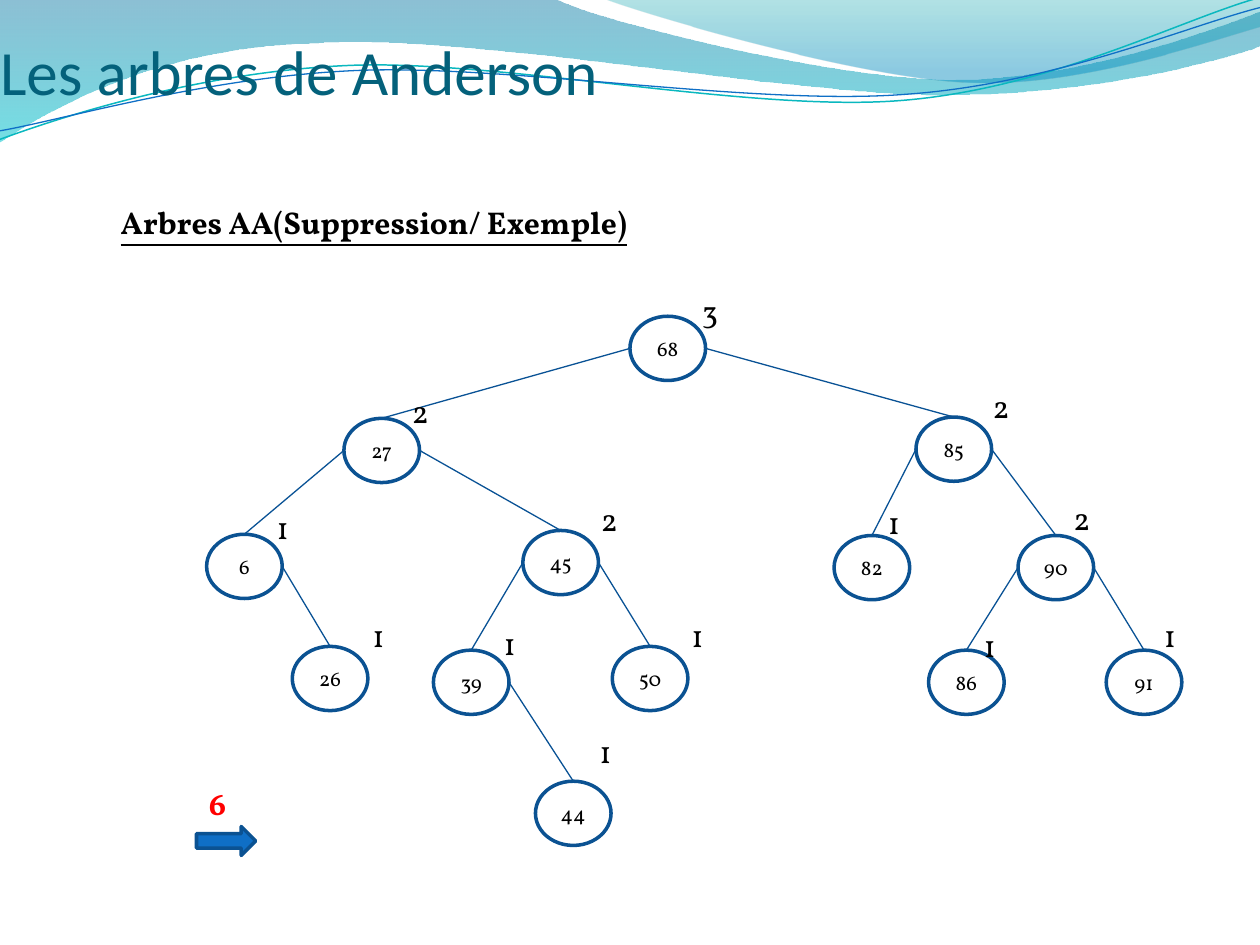
from lxml.etree import SubElement
from pptx import Presentation
from pptx.dml.color import RGBColor
from pptx.enum.shapes import MSO_CONNECTOR, MSO_SHAPE
from pptx.enum.text import MSO_ANCHOR, PP_ALIGN
from pptx.oxml.ns import qn
from pptx.util import Pt

PX = 9144
WIDE, HIGH = 1000, 750
NODE_W, NODE_H = 60, 51
TAG_W, TAG_H = 33, 40

THEME = {
    "title": "04617B", "ink": "000000", "paper": "FFFFFF", "red": "FF0000",
    "blue": "0F6FC6", "rim": "0B5292", "edge": "095295", "teal": "0AB8BF",
    "head": "Calibri", "body": "Vollkorn",
    "big": 36, "mid": 18, "small": 12,
}

TITLE = "Les arbres de Anderson"
TOPIC = "Arbres AA(Suppression/ Exemple)"
GONE = "6"

# key, parent, node corner, level, level corner
NODES = [
    (68, None, (500, 251), 3, (547, 227)),
    (27, 68, (273, 332), 2, (317, 306)),
    (85, 68, (727, 331), 2, (778, 302)),
    (6, 27, (164, 424), 1, (208, 398)),
    (45, 27, (415, 421), 2, (467, 392)),
    (82, 85, (662, 425), 1, (693, 394)),
    (90, 85, (808, 425), 2, (842, 391)),
    (26, 6, (232, 513), 1, (284, 484)),
    (39, 45, (344, 516), 1, (388, 490)),
    (50, 45, (486, 513), 1, (537, 484)),
    (86, 90, (737, 516), 1, (769, 492)),
    (91, 90, (878, 516), 1, (912, 484)),
    (44, 39, (425, 620), 1, (464, 576)),
]

BANDS = [
    ([(0, -1), (440, -1), (476, 17, 664, 63, 758, 63),
      (853, 63, 958, 26, 1000, 9), (1001, 36),
      (983, 44, 870, 76, 746, 75), (622, 75, 382, 28, 257, 34),
      (129, 36, 46, 83, -1, 113)],
     [(0, "0074A1", 45), (1, "00C6CF", 55)]),
    ([(479, -1), (509, 11, 682, 62, 769, 65),
      (856, 69, 961, 32, 1000, 21), (1000, 0)],
     [(0, "00A1A9", 30), (0.8, "008BBF", 45)]),
]
WAVES = [
    ([(-1, 111), (48, 93, 158, 57, 277, 52), (395, 47, 593, 89, 713, 80),
      (833, 71, 938, 15, 1000, -2)], "teal", 0.85),
    ([(-1, 104), (47, 96, 164, 61, 283, 56), (403, 51, 597, 84, 717, 75),
      (836, 67, 941, 21, 1000, 6)], "blue", 0.75),
]


def tint(name):
    return RGBColor.from_string(THEME.get(name, name))


def write(shape, text, size="mid", font="body", color="ink", bold=False,
          under=False, align=PP_ALIGN.CENTER, anchor=MSO_ANCHOR.TOP, wrap=True):
    frame = shape.text_frame
    frame.word_wrap = wrap
    frame.vertical_anchor = anchor
    para = frame.paragraphs[0]
    para.alignment = align
    run = para.add_run()
    run.text = str(text)
    run.font.size = Pt(THEME[size])
    run.font.name = THEME[font]
    run.font.color.rgb = tint(color)
    run.font.bold = bold
    run.font.underline = under
    return frame


def box(shapes, x, y, w, h, text, **style):
    return write(shapes.add_textbox(x * PX, y * PX, w * PX, h * PX), text, **style)


def stroke(shape, color, width):
    shape.line.color.rgb = tint(color)
    shape.line.width = Pt(width)


def solid(shapes, kind, x, y, w, h, fill):
    shape = shapes.add_shape(kind, x * PX, y * PX, w * PX, h * PX)
    shape.shadow.inherit = False
    shape.fill.solid()
    shape.fill.fore_color.rgb = tint(fill)
    stroke(shape, "rim", 2)
    return shape


def trace(shapes, route, close):
    dots = [leg[i:i + 2] for leg in route for i in range(0, len(leg), 2)]
    pen = shapes.build_freeform(*dots[0], scale=PX)
    pen.add_line_segments(dots[1:], close=close)
    shape = pen.convert_to_shape()
    shape.shadow.inherit = False
    lines = list(shape._element.iter(qn("a:lnTo")))
    for leg in route[1:]:
        size = len(leg) // 2
        first, *rest = lines[:size]
        lines = lines[size:]
        if rest:
            curve = first.makeelement(qn("a:cubicBezTo"))
            first.addprevious(curve)
            for line in (first, *rest):
                curve.append(line[0])
                line.getparent().remove(line)
    return shape


def fade(shape, stops):
    shape.fill.gradient()
    shape.fill.gradient_angle = 270
    for stop, (place, color, alpha) in zip(shape.fill.gradient_stops, stops):
        stop.position = place
        stop.color.rgb = tint(color)
    for node, (place, color, alpha) in zip(shape._element.iter(qn("a:srgbClr")), stops):
        SubElement(node, qn("a:alpha")).set("val", str(alpha * 1000))
    shape.line.fill.background()


def link(shapes, start, end):
    ends = [round(v * PX) for v in start + end]
    line = shapes.add_connector(MSO_CONNECTOR.STRAIGHT, *ends)
    stroke(line, "edge", 0.75)
    SubElement(line._element.spPr, qn("a:effectLst"))


def sky(shapes):
    for route, stops in BANDS:
        fade(trace(shapes, route, True), stops)
    for route, color, width in WAVES:
        wave = trace(shapes, route, False)
        wave.fill.background()
        stroke(wave, color, width)


def head(shapes):
    title = shapes.title
    shapes._spTree.append(title._element)
    title.left, title.top, title.width, title.height = 0, 0, WIDE * PX, 86 * PX
    frame = write(title, TITLE, size="big", font="head", color="title",
                  align=PP_ALIGN.LEFT, anchor=MSO_ANCHOR.BOTTOM)
    frame.margin_left = frame.margin_right = frame.margin_bottom = 0
    frame.margin_top = 5 * PX
    box(shapes, 86, 156, 672, 40, TOPIC, bold=True, under=True, align=PP_ALIGN.LEFT)


def tree(shapes):
    spots = {key: spot for key, _, spot, _, _ in NODES}
    for key, root, (x, y), _, _ in NODES:
        if root is not None:
            left, top = spots[root]
            side = left if key < root else left + NODE_W
            link(shapes, (side, top + NODE_H / 2), (x + NODE_W / 2, y))
    for key, _, spot, level, tag in NODES:
        node = solid(shapes, MSO_SHAPE.OVAL, *spot, NODE_W, NODE_H, "paper")
        write(node, key, size="small", anchor=MSO_ANCHOR.MIDDLE)
        box(shapes, *tag, TAG_W, TAG_H, level, wrap=False)


def main():
    deck = Presentation()
    deck.slide_width, deck.slide_height = WIDE * PX, HIGH * PX
    shapes = deck.slides.add_slide(deck.slide_layouts[5]).shapes
    sky(shapes)
    head(shapes)
    tree(shapes)
    solid(shapes, MSO_SHAPE.RIGHT_ARROW, 156, 656, 47, 23, "blue")
    box(shapes, 156, 617, TAG_W, TAG_H, GONE, color="red", bold=True, wrap=False)
    deck.save("out.pptx")


if __name__ == "__main__":
    main()
